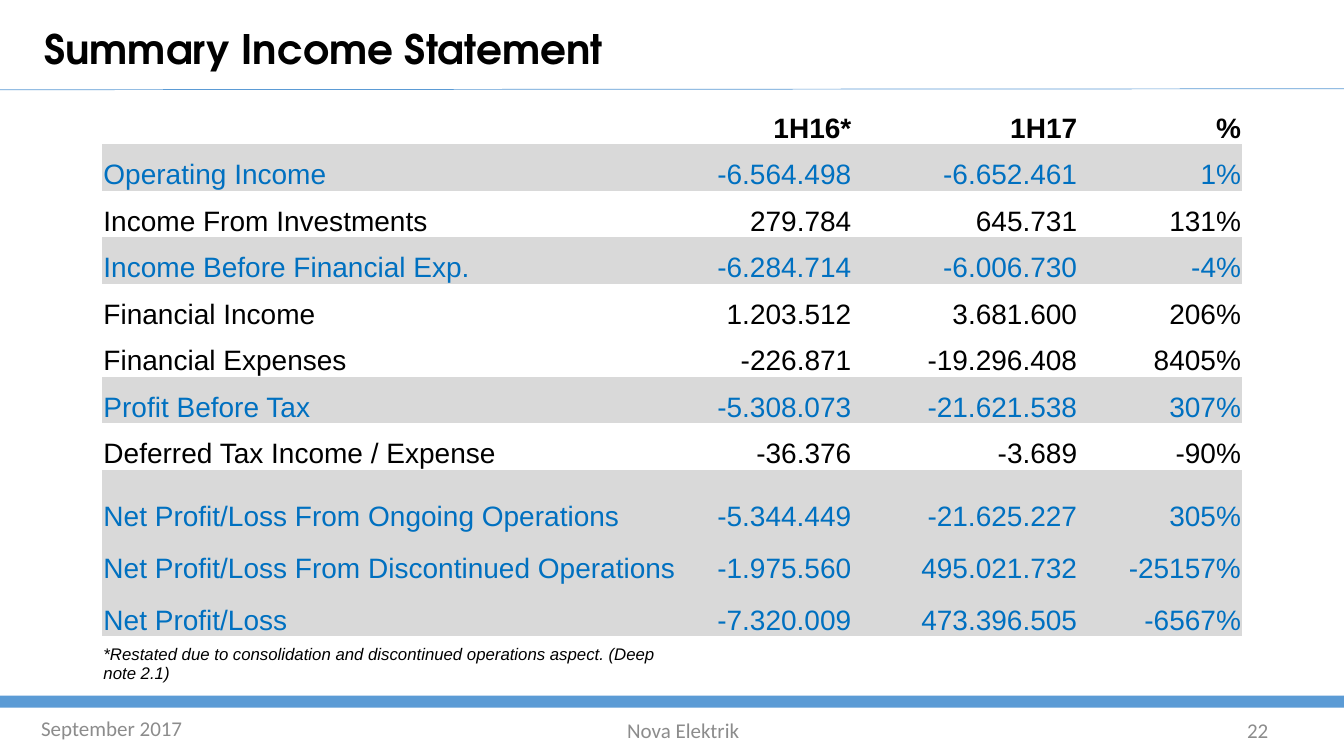
import pptx
import pptx.dml.color
import pptx.enum.shapes
import pptx.enum.text
import pptx.oxml.ns
import pptx.util
import lxml.etree
from dataclasses import dataclass

Pt = pptx.util.Pt
ALIGN = pptx.enum.text.PP_ALIGN
MIDDLE = pptx.enum.text.MSO_ANCHOR.MIDDLE
BOTTOM = pptx.enum.text.MSO_ANCHOR.BOTTOM
PLAIN_TABLE = "{2D5ABB26-0587-4C30-8999-92F81FD0307C}"


@dataclass(frozen=True)
class Theme:
    accent: str = "5B9BD5"
    text: str = "000000"
    subtotal: str = "0070C0"
    band: str = "D9D9D9"
    footer: str = "8C8C8C"
    title_font: str = "TeX Gyre Adventor"
    table_font: str = "Arial"
    footer_font: str = "Calibri"
    title_size: float = 29
    table_size: float = 20
    note_size: float = 12
    footer_size: float = 15


class SlideBuilder:
    def __init__(self, slide, theme):
        self.slide = slide
        self.theme = theme

    def color(self, value):
        return pptx.dml.color.RGBColor.from_string(value)

    def add_text(self, paragraph, text, font, size, color, align=ALIGN.LEFT,
                 bold=False, italic=False):
        paragraph.alignment = align
        run = paragraph.add_run()
        run.text = text
        run.font.name = font
        run.font.size = Pt(size)
        run.font.color.rgb = self.color(color)
        run.font.bold = bold
        run.font.italic = italic

    def title(self, text, left, top, width, height):
        shape = self.slide.shapes.title
        shape.left, shape.top, shape.width, shape.height = map(Pt, (left, top, width, height))
        frame = shape.text_frame
        frame.auto_size = pptx.enum.text.MSO_AUTO_SIZE.NONE
        frame.word_wrap = True
        frame.vertical_anchor = MIDDLE
        frame.margin_left, frame.margin_right = Pt(18.72), Pt(32.4)
        frame.margin_top = frame.margin_bottom = Pt(3.6)
        paragraph = frame.paragraphs[0]
        paragraph.line_spacing = 0.9
        self.add_text(paragraph, text, self.theme.title_font, self.theme.title_size,
                      self.theme.text, bold=True)

    def bar(self, left, top, width, height):
        shape = self.slide.shapes.add_shape(
            pptx.enum.shapes.MSO_SHAPE.RECTANGLE, *map(Pt, (left, top, width, height)))
        shape.shadow.inherit = False
        shape.fill.solid()
        shape.fill.fore_color.rgb = self.color(self.theme.accent)
        shape.line.fill.background()

    def line(self, start_x, start_y, end_x, end_y):
        connector = self.slide.shapes.add_connector(
            pptx.enum.shapes.MSO_CONNECTOR.STRAIGHT, *map(Pt, (start_x, start_y, end_x, end_y)))
        connector.line.color.rgb = self.color(self.theme.accent)
        connector.line.width = Pt(0.5)
        properties = connector.element.find(pptx.oxml.ns.qn("p:spPr"))
        lxml.etree.SubElement(properties, pptx.oxml.ns.qn("a:effectLst"))

    def footer(self, text, left, top, width, align):
        shape = self.slide.shapes.add_textbox(*map(Pt, (left, top, width, 28.8)))
        shape.text_frame.word_wrap = True
        shape.text_frame.vertical_anchor = MIDDLE
        self.add_text(shape.text_frame.paragraphs[0], text, self.theme.footer_font,
                      self.theme.footer_size, self.theme.footer, align)

    def cell(self, cell, text, banded, **style):
        cell.margin_left = cell.margin_right = cell.margin_top = Pt(0.72)
        cell.margin_bottom = 0
        cell.vertical_anchor = BOTTOM
        if banded:
            cell.fill.solid()
            cell.fill.fore_color.rgb = self.color(self.theme.band)
        else:
            cell.fill.background()
        if text:
            style = {"size": self.theme.table_size, **style}
            color = self.theme.subtotal if banded else self.theme.text
            self.add_text(cell.text_frame.paragraphs[0], text, self.theme.table_font,
                          color=color, **style)

    def table(self, left, top, widths, heights, rows, banded_rows, note):
        shape = self.slide.shapes.add_table(
            len(heights), len(widths), Pt(left), Pt(top), Pt(sum(widths)), Pt(sum(heights)))
        table = shape.table
        table.first_row = table.horz_banding = False
        next(shape.element.iter(pptx.oxml.ns.qn("a:tableStyleId"))).text = PLAIN_TABLE
        for column, width in zip(table.columns, widths):
            column.width = Pt(width)
        for row, height in zip(table.rows, heights):
            row.height = Pt(height)
        for row_index, values in enumerate(rows):
            for column_index, value in enumerate(values):
                self.cell(table.cell(row_index, column_index), value, row_index in banded_rows,
                          align=ALIGN.RIGHT if column_index else ALIGN.LEFT,
                          bold=row_index == 0)
        self.cell(table.cell(len(rows), 0), note, False, size=self.theme.note_size, italic=True)


ROWS = [
    ("", "1H16*", "1H17", "%"),
    ("Operating Income", "-6.564.498", "-6.652.461", "1%"),
    ("Income From Investments", "279.784", "645.731", "131%"),
    ("Income Before Financial Exp.", "-6.284.714", "-6.006.730", "-4%"),
    ("Financial Income", "1.203.512", "3.681.600", "206%"),
    ("Financial Expenses", "-226.871", "-19.296.408", "8405%"),
    ("Profit Before Tax", "-5.308.073", "-21.621.538", "307%"),
    ("Deferred Tax Income / Expense", "-36.376", "-3.689", "-90%"),
    ("Net Profit/Loss From Ongoing Operations", "-5.344.449", "-21.625.227", "305%"),
    ("Net Profit/Loss From Discontinued Operations", "-1.975.560", "495.021.732", "-25157%"),
    ("Net Profit/Loss", "-7.320.009", "473.396.505", "-6567%"),
]
NOTE = "*Restated due to consolidation and discontinued operations aspect. (Deep note 2.1)"


def main():
    presentation = pptx.Presentation()
    presentation.slide_width, presentation.slide_height = Pt(960), Pt(540)
    slide = presentation.slides.add_slide(presentation.slide_layouts.get_by_name("Title Only"))
    builder = SlideBuilder(slide, Theme())

    # Header
    builder.title("Summary Income Statement", 12.96, 6.48, 677.5, 59.76)
    builder.line(0, 64.1, 960, 63.4)

    # Income statement
    builder.table(73.2, 69.84, widths=[421.2, 114.5, 161.3, 117],
                  heights=[33.25] * 8 + [44.6, 37.2, 37.2, 33.25],
                  rows=ROWS, banded_rows={1, 3, 6, 8, 9, 10}, note=NOTE)

    # Footer
    builder.bar(0, 496.8, 960, 8.64)
    builder.footer("September 2017", 22.3, 505.4, 216, ALIGN.LEFT)
    builder.footer("Nova Elektrik", 326, 506.9, 324, ALIGN.CENTER)
    builder.footer("22", 697, 506.9, 216, ALIGN.RIGHT)

    presentation.save("out.pptx")


if __name__ == "__main__":
    main()
